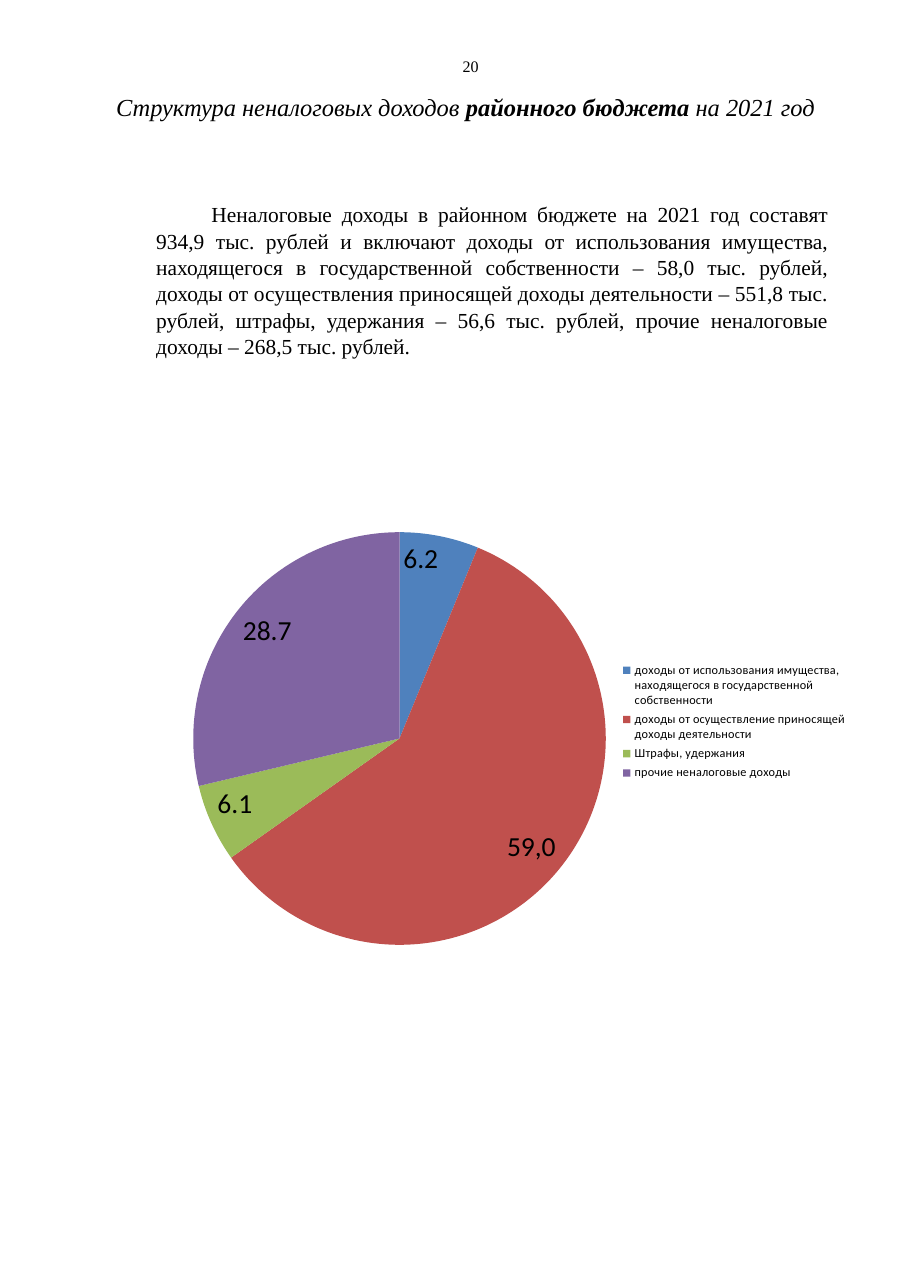
from lxml.etree import SubElement
from pptx import Presentation
from pptx.chart.data import CategoryChartData
from pptx.dml.color import RGBColor
from pptx.enum.chart import XL_CHART_TYPE, XL_LABEL_POSITION, XL_LEGEND_POSITION
from pptx.enum.text import PP_ALIGN
from pptx.oxml.ns import qn
from pptx.util import Inches, Pt

COLORS = {
    "text": "000000",
    "property": "4F81BD",
    "activity": "C0504D",
    "fines": "9BBB59",
    "other": "8064A2",
}

INCOME = [
    ("доходы от использования имущества, находящегося в государственной собственности", 6.2, "property"),
    ("доходы от осуществление приносящей доходы деятельности", 59, "activity"),
    ("Штрафы, удержания", 6.1, "fines"),
    ("прочие неналоговые доходы", 28.7, "other"),
]

TITLE = [
    ("Структура неналоговых доходов ", False),
    ("районного бюджета ", True),
    ("на 2021 год", False),
]

SUMMARY = (
    "Неналоговые доходы в районном бюджете на 2021 год составят 934,9 тыс. рублей "
    "и включают доходы от использования имущества, находящегося в государственной "
    "собственности – 58,0 тыс. рублей, доходы от осуществления приносящей доходы "
    "деятельности – 551,8 тыс. рублей, штрафы, удержания – 56,6 тыс. рублей, "
    "прочие неналоговые доходы – 268,5 тыс. рублей."
)


def rgb(name):
    return RGBColor.from_string(COLORS[name])


def apply_format(target, values):
    for name, value in values.items():
        setattr(target, name, value)


def format_font(font, size, family="Times New Roman", **extra):
    apply_format(font, {"size": Pt(size), "name": family, **extra})
    font.color.rgb = rgb("text")


def add_paragraph_box(slide, box, runs, size, inset=0, wrap=True, italic=False, **layout):
    """Place one paragraph of (text, bold) runs in the box."""
    frame = slide.shapes.add_textbox(*map(Inches, box)).text_frame
    margins = ("margin_left", "margin_right", "margin_top", "margin_bottom")
    insets = (inset, inset, inset / 2, inset / 2)
    apply_format(frame, dict(zip(margins, map(Inches, insets)), word_wrap=wrap))
    paragraph = frame.paragraphs[0]
    apply_format(paragraph, layout)
    for text, bold in runs:
        run = paragraph.add_run()
        run.text = text
        format_font(run.font, size, bold=bold, italic=italic)
    return paragraph


def add_page_number(slide, box):
    add_paragraph_box(slide, box, [("20", False)], 10.5, wrap=False)


def add_title(slide, box):
    add_paragraph_box(slide, box, TITLE, 16, italic=True,
                      alignment=PP_ALIGN.CENTER, line_spacing=Pt(16.3))


def add_summary(slide, box):
    paragraph = add_paragraph_box(
        slide, box, [(SUMMARY, False)], 14, inset=0.1, alignment=PP_ALIGN.JUSTIFY,
        line_spacing=Pt(17.3), space_before=Pt(6.3))
    # First-line indent
    properties = paragraph._p.get_or_add_pPr()
    properties.set("marL", str(Inches(0.01)))
    properties.set("indent", str(Inches(0.5)))


def set_plot_area(chart, x, y, w, h):
    """Fix the pie's place as fractions of the chart box."""
    area = chart._chartSpace.chart.plotArea
    layout = area.find(qn("c:layout"))
    if layout is None:
        layout = SubElement(area, qn("c:layout"))
        area.insert(0, layout)
    manual = SubElement(layout, qn("c:manualLayout"))
    settings = {"layoutTarget": "inner", "xMode": "edge", "yMode": "edge",
                "x": x, "y": y, "w": w, "h": h}
    for tag, value in settings.items():
        SubElement(manual, qn(f"c:{tag}")).set("val", str(value))


def add_income_pie(slide, box):
    data = CategoryChartData()
    data.categories = [category for category, _, _ in INCOME]
    data.add_series("Series 1", [share for _, share, _ in INCOME])
    chart = slide.shapes.add_chart(XL_CHART_TYPE.PIE, *map(Inches, box), data).chart
    chart.has_title = False
    format_font(chart.font, 18, "Calibri")
    set_plot_area(chart, 0.07, 0.22, 0.58, 0.61)

    # Legend
    chart.has_legend = True
    apply_format(chart.legend, {"position": XL_LEGEND_POSITION.RIGHT,
                                "include_in_layout": False})
    format_font(chart.legend.font, 8, "Calibri")

    # Slices
    plot = chart.plots[0]
    plot.vary_by_categories = True
    shares = plot.series[0]
    for index, (_, _, color) in enumerate(INCOME):
        fill = shares.points[index].format.fill
        fill.solid()
        fill.fore_color.rgb = rgb(color)

    # Labels
    apply_format(shares.data_labels, {"show_value": True, "show_percentage": False,
                                      "position": XL_LABEL_POSITION.INSIDE_END})
    format_font(shares.data_labels.font, 18, "Calibri")
    activity_label = shares.points[1].data_label
    activity_run = activity_label.text_frame.paragraphs[0].add_run()
    activity_run.text = "59,0"
    format_font(activity_run.font, 18, "Calibri")
    activity_label.position = XL_LABEL_POSITION.INSIDE_END


def main():
    presentation = Presentation()
    apply_format(presentation, {"slide_width": Inches(8.27), "slide_height": Inches(11.69)})
    slide = presentation.slides.add_slide(presentation.slide_layouts[6])
    add_page_number(slide, (4.2, 0.51, 0.18, 0.15))
    add_title(slide, (0.83, 0.88, 6.79, 0.36))
    add_income_pie(slide, (1.28, 3.48, 6.52, 6.14))
    add_summary(slide, (1.31, 1.77, 6.31, 1.52))
    presentation.save("out.pptx")


if __name__ == "__main__":
    main()
